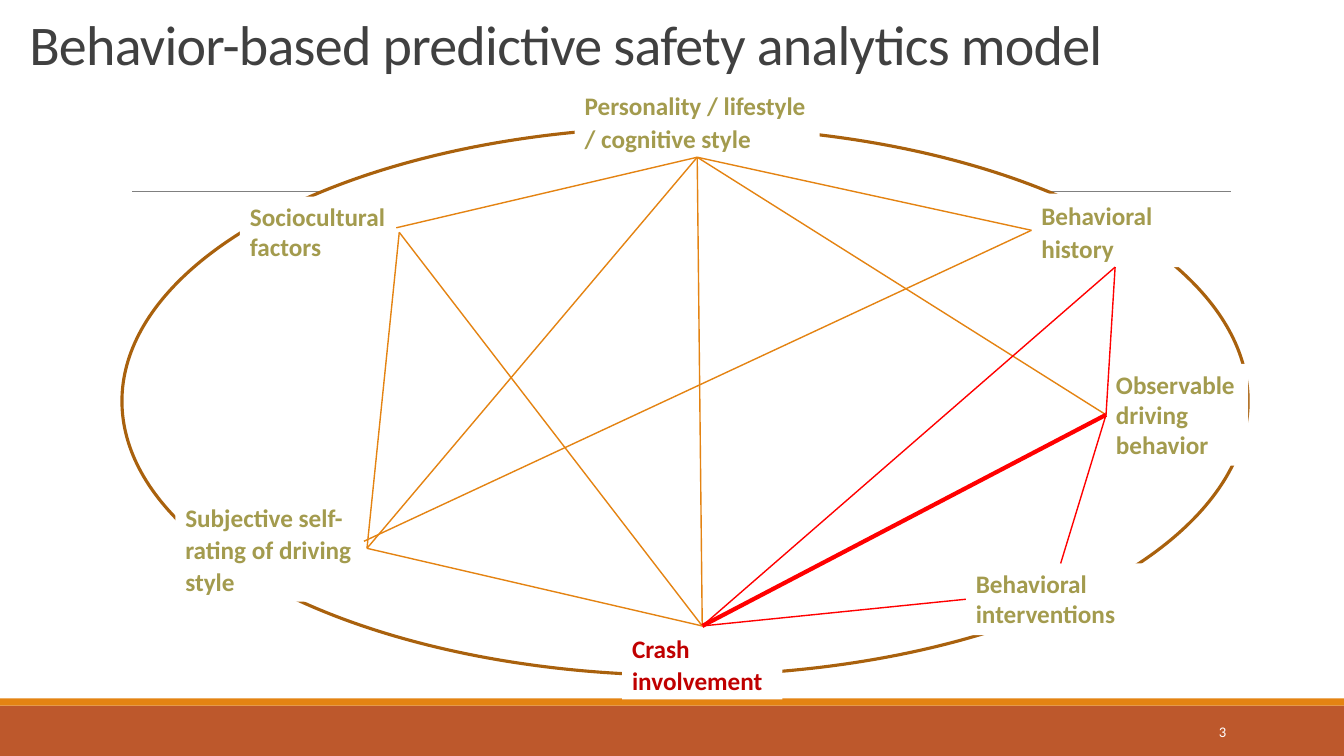
import pptx
import pptx.util
import pptx.dml.color
import pptx.enum.shapes
import pptx.enum.text
import pptx.oxml.ns
import lxml.etree

Inches, Pt = pptx.util.Inches, pptx.util.Pt
Kind = pptx.enum.shapes.MSO_SHAPE
Anchor = pptx.enum.text.MSO_ANCHOR
Align = pptx.enum.text.PP_ALIGN

WHITE, OLIVE, ORANGE, RED = "FFFFFF", "A39B4E", "E48312", "FF0000"
TOP, LEFT, BOTTOM, RIGHT = range(4)

# Factor: text, place, colour, loose spacing
FACTORS = {
    "style": ("Personality / lifestyle / cognitive style", (5.7, 0.83, 2.43, 0.73), OLIVE, True),
    "rating": ("Subjective self-rating of driving style", (1.74, 4.91, 1.9, 1.06), OLIVE, True),
    "social": ("Sociocultural\nfactors", (2.38, 1.95, 1.58, 0.71), OLIVE, False),
    "action": ("Behavioral interventions", (9.58, 5.59, 1.88, 0.71), OLIVE, False),
    "crash": ("Crash involvement", (6.17, 6.21, 1.59, 0.73), "C00000", True),
    "history": ("Behavioral history", (10.23, 1.92, 1.66, 0.73), OLIVE, True),
    "driving": ("Observable driving behavior", (10.97, 3.61, 1.41, 1.01), OLIVE, False),
}

# Link: two ends (factor and side, or a free point), colour, width
LINKS = [
    (("style", BOTTOM), ("driving", LEFT), ORANGE, 1),
    (("style", BOTTOM), ("crash", TOP), ORANGE, 1),
    (("style", BOTTOM), ("rating", RIGHT), ORANGE, 1),
    (("crash", TOP), ("social", RIGHT), ORANGE, 1),
    (("crash", TOP), ("action", LEFT), RED, 1),
    (("crash", TOP), ("driving", LEFT), RED, 3),
    (("crash", TOP), ("history", BOTTOM), RED, 1),
    (("crash", TOP), ("rating", RIGHT), ORANGE, 1),
    (("action", TOP), ("driving", LEFT), RED, 1),
    (("rating", RIGHT), ("social", RIGHT), ORANGE, 1),
    (("driving", LEFT), ("history", BOTTOM), RED, 1),
    (("style", BOTTOM), ("history", LEFT), ORANGE, 1),
    ((3.93, 2.26), ("style", BOTTOM), ORANGE, 1),
    (("history", LEFT), (3.61, 5.37), ORANGE, 1),
]


def paint(target, color):
    if hasattr(target, "solid"):
        target.solid()
        target.fore_color.rgb = pptx.dml.color.RGBColor.from_string(color)
    else:
        target.rgb = pptx.dml.color.RGBColor.from_string(color)


def write(frame, text, size, color, bold=False):
    frame.text = text
    frame.word_wrap = True
    for para in frame.paragraphs:
        for run in para.runs:
            run.font.name = "Calibri"
            run.font.size = Pt(size)
            run.font.bold = bold
            paint(run.font.color, color)


def add_form(slide, kind, place, fill, line=None, width=1):
    form = slide.shapes.add_shape(kind, *map(Inches, place))
    form.shadow.inherit = False
    paint(form.fill, fill)
    if line:
        paint(form.line.fill, line)
        form.line.width = Pt(width)
    else:
        form.line.fill.background()
    return form


def add_factor(slide, text, place, color, loose):
    box = add_form(slide, Kind.RECTANGLE, place, WHITE)
    write(box.text_frame, text, 18, color, True)
    box.text_frame.vertical_anchor = Anchor.TOP
    for para in box.text_frame.paragraphs:
        para.alignment = Align.LEFT
        if loose:
            para.line_spacing = 1.07
            para.space_before = Pt(2)


def add_line(slide, start, end, color, width):
    line = slide.shapes.add_connector(
        pptx.enum.shapes.MSO_CONNECTOR.STRAIGHT, *map(Inches, start + end))
    paint(line.line.fill, color)
    line.line.width = Pt(width)
    lxml.etree.SubElement(line._element.spPr, pptx.oxml.ns.qn("a:effectLst"))
    return line


def add_link(slide, boxes, start, end, color, width):
    line = add_line(slide, (0, 0), (1, 1), color, width)
    if start[0] in boxes:
        line.begin_connect(boxes[start[0]], start[1])
    else:
        line.begin_x, line.begin_y = map(Inches, start)
    if end[0] in boxes:
        line.end_connect(boxes[end[0]], end[1])
    else:
        line.end_x, line.end_y = map(Inches, end)


def set_title(slide, text):
    title = slide.shapes.title
    title.left, title.top, title.width, title.height = map(Inches, (0.19, 0.27, 11.55, 0.54))
    frame = title.text_frame
    write(frame, text, 40, "404040")
    frame.auto_size = pptx.enum.text.MSO_AUTO_SIZE.NONE
    frame.vertical_anchor = Anchor.BOTTOM
    para = frame.paragraphs[0]
    para.alignment = Align.LEFT
    para.line_spacing = 0.85
    para.runs[0]._r.get_or_add_rPr().set("spc", "-50")


def add_number(slide, text):
    box = slide.shapes.add_textbox(*map(Inches, (10.83, 7.06, 1.43, 0.4)))
    write(box.text_frame, text, 10.5, WHITE)
    box.text_frame.vertical_anchor = Anchor.MIDDLE
    box.text_frame.paragraphs[0].alignment = Align.RIGHT


def main():
    deck = pptx.Presentation()
    deck.slide_width, deck.slide_height = Inches(13.33), Inches(7.5)
    slide = deck.slides.add_slide(deck.slide_layouts[5])
    set_title(slide, "Behavior-based predictive safety analytics model")

    # Footer bands and rule
    add_form(slide, Kind.RECTANGLE, (0, 7, 13.33, 0.5), "BD582C")
    add_form(slide, Kind.RECTANGLE, (0, 6.93, 13.33, 0.07), ORANGE)
    add_line(slide, (1.31, 1.9), (12.21, 1.9), "808080", 0.5)

    # Ring of factors
    add_form(slide, Kind.OVAL, (1.21, 1.26, 11.17, 5.44), WHITE, "A9610D", 2.25)
    boxes = {}
    for name, factor in FACTORS.items():
        add_factor(slide, *factor)
        boxes[name] = slide.shapes[-1]

    # Links between factors
    for link in LINKS:
        add_link(slide, boxes, *link)

    add_number(slide, "3")
    deck.save("out.pptx")


if __name__ == "__main__":
    main()
